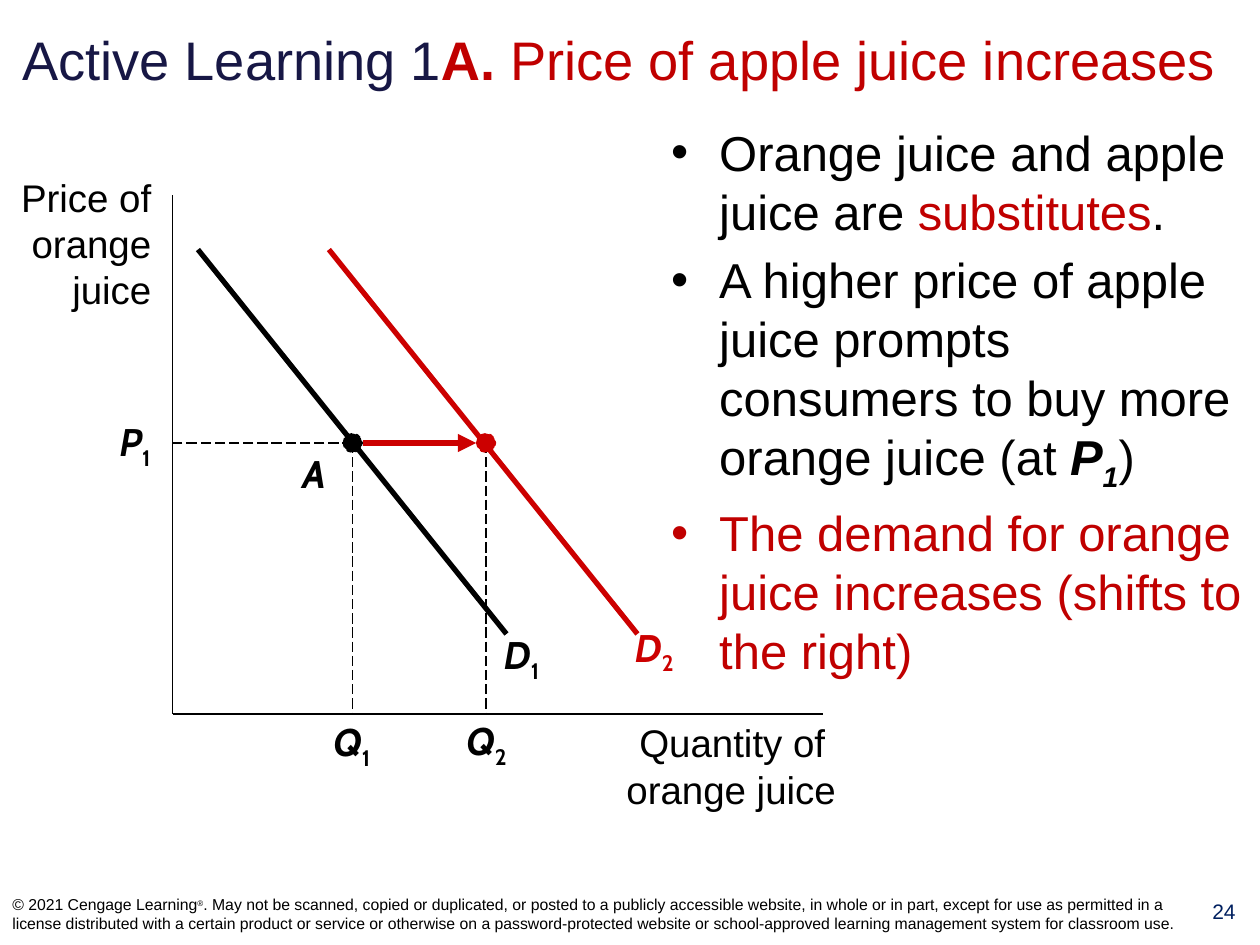
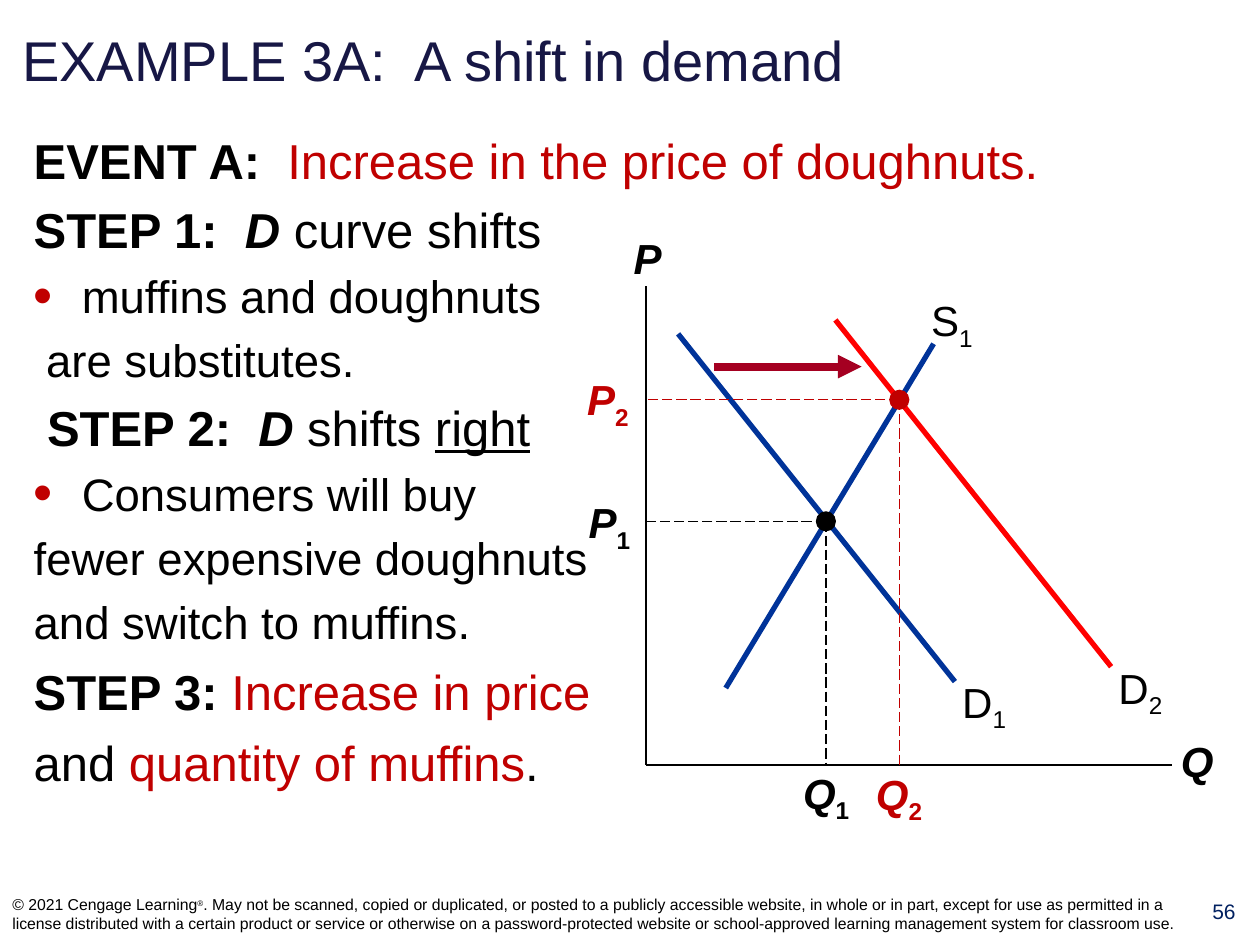
from lxml.etree import SubElement as Sub
from pptx import Presentation as Deck
from pptx.dml.color import RGBColor as RGB
from pptx.enum.dml import MSO_LINE as Dash
from pptx.enum.shapes import MSO_CONNECTOR as Link, MSO_SHAPE as Form
from pptx.enum.text import MSO_ANCHOR as Anchor, PP_ALIGN as Align
from pptx.oxml.ns import qn
from pptx.util import Cm, Pt

BLACK = RGB(0x00, 0x00, 0x00)
NAVY = RGB(0x17, 0x17, 0x45)
PAGE = RGB(0x00, 0x20, 0x60)
RED = RGB(0xC0, 0x00, 0x00)
ROSE = RGB(0xCC, 0x00, 0x00)
BRIGHT = RGB(0xFF, 0x00, 0x00)
WINE = RGB(0xA5, 0x00, 0x21)
BLUE = RGB(0x00, 0x33, 0x99)

LEGAL = (
    ". May not be scanned, copied or duplicated, or posted to a publicly "
    "accessible website, in whole or in part, except for use as permitted in a "
    "license distributed with a certain product or service or otherwise on a "
    "password-protected website or school-approved learning management system "
    "for classroom use."
)
BASE = {"_": "-25000", "^": "30000"}
LEFT, MID, RIGHT = Align.LEFT, Align.CENTER, Align.RIGHT


class Pen:
    """Draws on the current slide; all places and lengths are in cm."""

    def __init__(self):
        self.deck = Deck()
        self.deck.slide_width, self.deck.slide_height = Cm(25.4), Cm(19.05)
        self.font = "Arial"

    def start(self, title, size, page):
        """New slide with its title, page number and copyright footer."""
        layout = self.deck.slide_layouts[6]
        self.shapes = self.deck.slides.add_slide(layout).shapes
        self.para(self.box(0.2, 0.28, 24.77, 1.83, anchor=Anchor.MIDDLE),
                  title, size, NAVY)
        self.para(self.box(23.95, 17.98, 1.45, 1.04), page, 12, PAGE, MID)
        legal = [("© 2021 Cengage Learning",), ("®", "^", BLACK, 8), (LEGAL,)]
        self.para(self.box(0, 17.78, 24.13, 1.27, anchor=Anchor.MIDDLE),
                  legal, 9)

    def box(self, x, y, w, h, pad=True, anchor=Anchor.TOP):
        frame = self.shapes.add_textbox(Cm(x), Cm(y), Cm(w), Cm(h)).text_frame
        frame.word_wrap = True
        frame.vertical_anchor = anchor
        if not pad:
            frame.margin_left = frame.margin_right = 0
            frame.margin_top = frame.margin_bottom = 0
        return frame

    def para(self, frame, parts, size, color=BLACK, align=LEFT, gap=0,
             lead=None, dot=None, indent=0, font=None):
        """Parts are a string or (text, flags, colour, size) tuples."""
        first = not frame.paragraphs[0].runs
        para = frame.paragraphs[0] if first else frame.add_paragraph()
        para.alignment = align
        if lead:
            para.line_spacing = lead
        if gap and not first:
            para.space_before = Pt(round(gap * size, 1))
        if dot or indent:
            self.bullet(para, dot, indent)
        for part in [(parts,)] if isinstance(parts, str) else parts:
            text, flags, tint, high = part + ("", color, size)[len(part) - 1:]
            run = para.add_run()
            run.text = text
            face = run.font
            face.name, face.size = font or self.font, Pt(high)
            face.color.rgb = tint
            face.bold, face.italic = "b" in flags, "i" in flags
            face.underline = "u" in flags
            for sign in BASE.keys() & set(flags):
                run._r.get_or_add_rPr().set("baseline", BASE[sign])

    def bullet(self, para, dot, indent):
        prop = para._p.get_or_add_pPr()
        prop.set("marL", str(Cm(0.97 if dot else indent)))
        prop.set("indent", str(Cm(-0.97 if dot else 0)))
        if not dot:
            return
        if dot == "red":
            tint = Sub(prop, qn("a:buClr"))
            Sub(tint, qn("a:srgbClr"), val=str(RED))
            Sub(prop, qn("a:buSzPct"), val="120000")
        Sub(prop, qn("a:buFont"), typeface="Arial")
        Sub(prop, qn("a:buChar"), char="•")

    def mark(self, name, x, y, w, h, size, color=BLACK, flags="bi",
             align=MID, font=None, pad=True):
        """Letter with an optional subscript digit."""
        parts = [(name[0], flags)]
        if name[1:]:
            parts.append((name[1:], flags.replace("i", "") + "_"))
        self.para(self.box(x, y, w, h, pad), parts, size, color, align,
                  font=font)

    def line(self, x1, y1, x2, y2, color=BLACK, width=1, dash=None,
             arrow=False):
        link = self.shapes.add_connector(Link.STRAIGHT, Cm(x1), Cm(y1),
                                         Cm(x2), Cm(y2))
        link.line.color.rgb, link.line.width = color, Pt(width)
        if dash:
            link.line.dash_style = dash
        if arrow:
            Sub(link.line._get_or_add_ln(), qn("a:tailEnd"), type="triangle")
        Sub(link._element.spPr, qn("a:effectLst"))

    def axes(self, x, y, top, right):
        self.line(x, top, x, y)
        self.line(x, y, right, y)

    def guide(self, x, y, left, base, color=BLACK):
        """Dashed lines from a point to the left and down to the axis."""
        for end in ((left, y), (x, base)):
            self.line(x, y, *end, color, 0.75, Dash.LONG_DASH)

    def dot(self, x, y, color=BLACK, dash=None):
        disc = self.shapes.add_shape(Form.OVAL, Cm(x - 0.19), Cm(y - 0.19),
                                     Cm(0.38), Cm(0.38))
        disc.shadow.inherit = False
        disc.fill.solid()
        disc.fill.fore_color.rgb = disc.line.color.rgb = color
        disc.line.width = Pt(0.75)
        if dash:
            disc.line.dash_style = dash


def juice(pen):
    pen.start([("Active Learning 1",), ("A. ", "b", RED),
               ("Price of apple juice increases", "", RED)], 31, "24")

    # Explanation
    body = pen.box(13.28, 2.34, 12.12, 14.81)
    points = [
        [("Orange juice and apple juice are ",), ("substitutes", "", RED),
         (".",)],
        [("A higher price of apple juice prompts consumers to buy more "
          "orange juice (at ",), ("P", "bi"), ("1", "bi_"), (")",)],
        [("The demand for orange juice increases (shifts to the right)", "",
          RED)],
    ]
    for point in points:
        pen.para(body, point, 28, gap=0.2, dot="plain")

    # Axes
    left, base, price = 3.48, 14.4, 8.93
    pen.axes(left, base, 3.94, 16.59)
    pen.para(pen.box(0, 3.38, 3.3, 3.07), "Price of orange juice", 22,
             align=RIGHT)
    name = pen.box(9.78, 14.38, 7.32, 2.11)
    for row in ("Quantity of ", "orange juice"):
        pen.para(name, row, 22, align=RIGHT)

    # Demand curves and quantities at the same price
    old, new = 7.11, 9.8
    pen.guide(new, price, old, base)
    for x, color in ((3.99, BLACK), (6.63, ROSE)):
        pen.line(x, 5.03, x + 6.22, 12.78, color, 3)
    pen.line(7.32, price, 9.6, price, ROSE, 3.5, arrow=True)
    pen.dot(new, price, ROSE, Dash.DASH)
    pen.guide(old, price, left, base)
    pen.dot(old, price, BLACK, Dash.DASH)

    # Labels
    for name, x, y, color, align in (
            ("Q2", 8.97, 14.33, BLACK, MID), ("D1", 9.91, 12.6, BLACK, LEFT),
            ("D2", 12.55, 12.45, ROSE, LEFT), ("P1", 1.88, 8.31, BLACK, MID),
            ("Q1", 6.25, 14.35, BLACK, MID), ("A", 5.49, 8.94, BLACK, MID)):
        pen.mark(name, x, y, 1.68, 1.19, 22, color, align=align, font="Cabin")


def muffin(pen):
    pen.start("EXAMPLE 3A:  A shift in demand", 32, "56")

    # Steps: parts, size, gap, bullet, indent
    body = pen.box(0.43, 2.51, 24.56, 15.04)
    pen.para(body, [("EVENT A:  ", "b"),
                    ("Increase in the price of doughnuts.", "", RED)], 28)
    steps = [
        ([("STEP 1:  ", "b"), ("D", "bi"), (" curve shifts",)],
         28, 0.15, None, 0),
        ("muffins and doughnuts", 26, 0.15, "red", 0),
        ("are substitutes.", 26, 0.15, None, 0.25),
        ([("STEP 2:  ", "b"), ("D", "bi"), (" shifts ",), ("right", "u")],
         28, 0.15, None, 0.27),
        ("Consumers will buy", 26, 0.15, "red", 0),
        ("fewer expensive doughnuts", 26, 0.15, None, 0),
        ("and switch to muffins.", 26, 0.15, None, 0),
        ([("STEP 3: ", "b"), ("Increase in price", "", RED)],
         28, 0.2, None, 0),
        ([("and",), (" quantity of muffins", "", RED), (".",)],
         28, 0.2, None, 0),
    ]
    for parts, size, gap, dot, indent in steps:
        pen.para(body, parts, size, gap=gap, lead=1.05, dot=dot,
                 indent=indent)

    # Axes
    left, base = 13.02, 15.42
    pen.axes(left, base, 5.77, 23.62)
    pen.mark("P", 12.47, 4.57, 1.17, 1.27, 24)
    pen.mark("Q", 23.5, 14.71, 1.27, 1.27, 24)

    # Curves with their names
    for ends, color, name, x, y in (
            ((13.67, 6.73, 19.25, 13.74), BLUE, "D1", 19.08, 13.51),
            ((14.63, 13.87, 18.82, 6.93), BLUE, "S1", 18.43, 5.82),
            ((16.84, 6.45, 22.4, 13.44), BRIGHT, "D2", 22.23, 13.23)):
        pen.line(*ends, color, 3)
        pen.mark(name, x, y, 1.52, 1.27, 24, flags="")
    pen.line(14.4, 7.39, 17.37, 7.39, WINE, 4.5, arrow=True)

    # Old and new equilibrium
    for num, x, y, color, px, py, qx, qy in (
            ("1", 16.65, 10.51, BLACK, 11.61, 10.01, 15.98, 15.47),
            ("2", 18.13, 8.06, RED, 11.58, 7.54, 17.45, 15.49)):
        pen.guide(x, y, left, base, color)
        pen.dot(x, y, color)
        pen.mark("P" + num, px, py, 1.35, 1.02, 24, color, pad=False)
        pen.mark("Q" + num, qx, qy, 1.35, 1.02, 24, color, pad=False)


def main():
    pen = Pen()
    juice(pen)
    muffin(pen)
    pen.deck.save("out.pptx")


if __name__ == "__main__":
    main()
